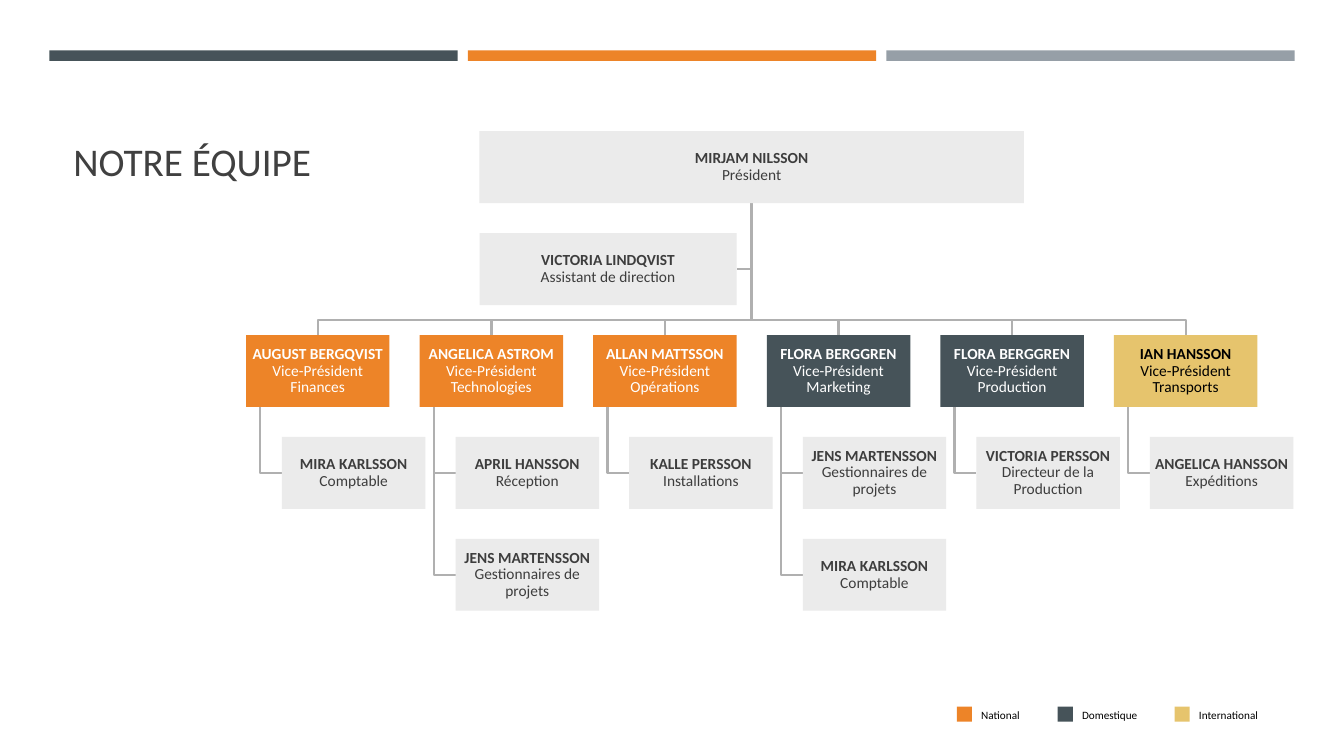
import lxml.etree
import pptx
import pptx.dml.color
import pptx.enum.shapes
import pptx.enum.text
import pptx.oxml.ns
import pptx.util

ORANGE, SLATE, GOLD, STEEL = "ED8428", "465359", "E6C46D", "969FA7"
PALE, WIRE, TITLE_INK, INK = "EBEBEB", "B0B0B0", "404040", "3D3D3D"
WHITE, BLACK = "FFFFFF", "000000"
ANCHOR = pptx.enum.text.MSO_ANCHOR
ALIGN = pptx.enum.text.PP_ALIGN


def color(value):
    return pptx.dml.color.RGBColor.from_string(value)


class Page:
    """Places elements on a grid of 160 columns by 90 rows."""
    font = "Calibri"
    cell = pptx.util.Inches(7.5) / 90

    def __init__(self, deck):
        self.shapes = deck.slides.add_slide(deck.slide_layouts[6]).shapes

    def grid(self, *units):
        return [round(unit * self.cell) for unit in units]

    def rect(self, left, top, width, height, fill):
        box = self.shapes.add_shape(pptx.enum.shapes.MSO_SHAPE.RECTANGLE,
                                    *self.grid(left, top, width, height))
        box.shadow.inherit = False
        box.fill.solid()
        box.fill.fore_color.rgb = color(fill)
        box.line.fill.background()
        return box

    def frame(self, box, anchor, inset=(0, 0)):
        across, down = self.grid(*inset)
        settings = {"word_wrap": True, "vertical_anchor": anchor,
                    "margin_left": across, "margin_right": across,
                    "margin_top": down, "margin_bottom": down}
        for name, value in settings.items():
            setattr(box.text_frame, name, value)
        return box.text_frame.paragraphs[0]

    def span(self, para, text, size, ink, bold=False):
        span = para.add_run()
        span.text = text
        settings = {"name": self.font, "size": pptx.util.Pt(size), "bold": bold}
        for name, value in settings.items():
            setattr(span.font, name, value)
        span.font.color.rgb = color(ink)

    def label(self, left, top, width, height, text, size, ink, anchor, inset=(0, 0)):
        box = self.shapes.add_textbox(*self.grid(left, top, width, height))
        self.span(self.frame(box, anchor, inset), text, size, ink)

    def person(self, left, top, width, height, name, role, fill=PALE, ink=INK):
        box = self.rect(left, top, width, height, fill)
        para = self.frame(box, ANCHOR.MIDDLE, (0.12, 0.12))
        para.alignment = ALIGN.CENTER
        para.line_spacing = 0.9
        self.span(para, name, 11, ink, bold=True)
        para.add_line_break()
        # The break takes the text size, so it does not stretch the line
        lxml.etree.SubElement(para._p[-1], pptx.oxml.ns.qn("a:rPr"), sz="1100")
        self.span(para, role, 11, ink)

    def elbow(self, *points):
        start, *rest = [self.grid(*point) for point in points]
        builder = self.shapes.build_freeform(*start, scale=1.0)
        builder.add_line_segments(rest, close=False)
        wire = builder.convert_to_shape()
        wire.shadow.inherit = False
        wire.fill.background()
        wire.line.color.rgb = color(WIRE)
        wire.line.width = pptx.util.Pt(1.75)


# Team: each branch is name, role, colours and direct reports
BRANCHES = [
    ("AUGUST BERGQVIST", "Vice-Président Finances", ORANGE, WHITE,
     [("MIRA KARLSSON", "Comptable")]),
    ("ANGELICA ASTROM", "Vice-Président Technologies", ORANGE, WHITE,
     [("APRIL HANSSON", "Réception"),
      ("JENS MARTENSSON", "Gestionnaires de projets")]),
    ("ALLAN MATTSSON", "Vice-Président Opérations", ORANGE, WHITE,
     [("KALLE PERSSON", "Installations")]),
    ("FLORA BERGGREN", "Vice-Président Marketing", SLATE, WHITE,
     [("JENS MARTENSSON", "Gestionnaires de projets"),
      ("MIRA KARLSSON", "Comptable")]),
    ("FLORA BERGGREN", "Vice-Président Production", SLATE, WHITE,
     [("VICTORIA PERSSON", "Directeur de la Production")]),
    ("IAN HANSSON", "Vice-Président Transports", GOLD, BLACK,
     [("ANGELICA HANSSON", "Expéditions")]),
]
LEGEND = [(113.88, "National", ORANGE), (125.88, "Domestique", SLATE),
          (139.8, "International", GOLD)]

# Chart measures, in grid cells
BOX_W, BOX_H = 17.08, 8.56
FIRST_LEFT, BRANCH_STEP = 29.28, 20.66
LEVELS = [15.63 + 12.13 * level for level in range(5)]
CENTER = FIRST_LEFT + 2.5 * BRANCH_STEP + BOX_W / 2
CHIEF_W, AIDE_W = 64.8, 30.6
CHIEF_LEFT = CENTER - CHIEF_W / 2
CHIEF_BOTTOM = LEVELS[0] + BOX_H
BUS = LEVELS[2] - 1.8
STEM, INDENT = 1.7, 4.28


def draw_chart(page):
    lefts = [FIRST_LEFT + BRANCH_STEP * index for index in range(len(BRANCHES))]

    # Connectors, behind the boxes
    aide_middle = LEVELS[1] + BOX_H / 2
    page.elbow((CENTER, CHIEF_BOTTOM), (CENTER, aide_middle),
               (CHIEF_LEFT + AIDE_W, aide_middle))
    for left, branch in zip(lefts, BRANCHES):
        middle = left + BOX_W / 2
        page.elbow((CENTER, CHIEF_BOTTOM), (CENTER, BUS),
                   (middle, BUS), (middle, LEVELS[2]))
        for top, _ in zip(LEVELS[3:], branch[-1]):
            page.elbow((left + STEM, LEVELS[2] + BOX_H),
                       (left + STEM, top + BOX_H / 2),
                       (left + INDENT, top + BOX_H / 2))

    # President and assistant
    page.person(CHIEF_LEFT, LEVELS[0], CHIEF_W, BOX_H, "MIRJAM NILSSON", "Président")
    page.person(CHIEF_LEFT, LEVELS[1], AIDE_W, BOX_H,
                "VICTORIA LINDQVIST", "Assistant de direction")

    # Vice-presidents and their reports
    for left, (name, role, fill, ink, reports) in zip(lefts, BRANCHES):
        page.person(left, LEVELS[2], BOX_W, BOX_H, name, role, fill, ink)
        for top, report in zip(LEVELS[3:], reports):
            page.person(left + INDENT, top, BOX_W, BOX_H, *report)


def main():
    deck = pptx.Presentation()
    deck.slide_width = pptx.util.Inches(13.33)
    deck.slide_height = pptx.util.Inches(7.5)
    page = Page(deck)

    # Top bars and title
    for index, fill in enumerate([SLATE, ORANGE, STEEL]):
        page.rect(5.88 + 49.8 * index, 6, 48.6, 1.25, fill)
    page.label(7.56, 9.6, 144.7, 12.96, "NOTRE ÉQUIPE", 28, TITLE_INK,
               ANCHOR.BOTTOM, (1.2, 0.6))

    draw_chart(page)

    # Legend
    for left, text, fill in LEGEND:
        page.rect(left, 84.12, 1.8, 1.8, fill)
        page.label(left + 2.9, 84.12, 9.2, 1.92, text, 8, BLACK, ANCHOR.MIDDLE)

    deck.save("out.pptx")


if __name__ == "__main__":
    main()
